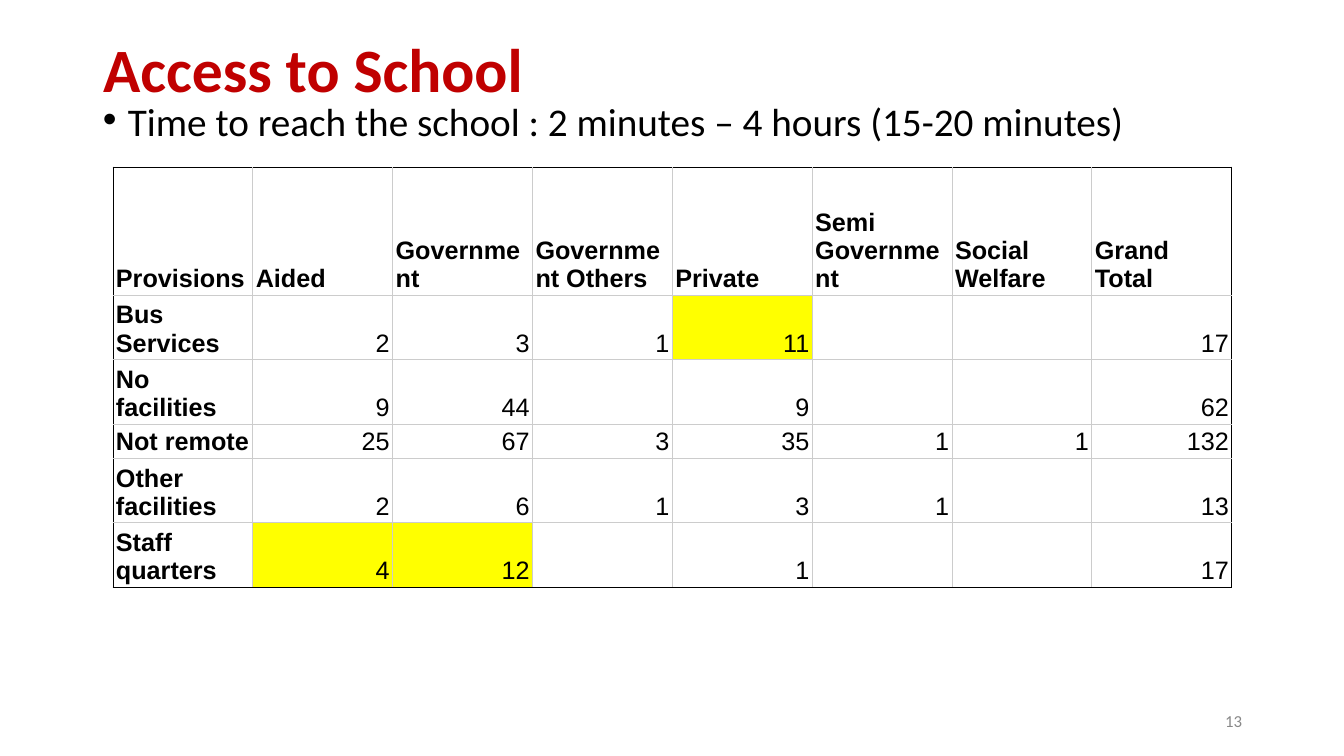
from lxml import etree
from pptx import Presentation
from pptx.dml.color import RGBColor
from pptx.enum.text import MSO_ANCHOR as ANCHOR, PP_ALIGN as ALIGN
from pptx.oxml.ns import qn
from pptx.util import Pt

PX = 914400 / 100.8
COLORS = {"title": "C00000", "text": "000000", "number": "888888",
          "grid": "CCCCCC", "frame": "000000", "highlight": "FFFF00"}

HEADINGS = ["Provisions", "Aided", "Government", "Government Others", "Private",
            "Semi Government", "Social Welfare", "Grand Total"]
PROVISIONS = [
    ["Bus Services", 2, 3, 1, 11, "", "", 17],
    ["No facilities", 9, 44, "", 9, "", "", 62],
    ["Not remote", 25, 67, 3, 35, 1, 1, 132],
    ["Other facilities", 2, 6, 1, 3, 1, "", 13],
    ["Staff quarters", 4, 12, "", 1, "", "", 17],
]
HIGHLIGHTS = {(1, 4), (5, 1), (5, 2)}


def px(n):
    return round(n * PX)


def rgb(name):
    return RGBColor.from_string(COLORS[name])


def write(tf, text, size=18, font="Calibri", color="text", bold=False,
          align=ALIGN.LEFT, anchor=ANCHOR.TOP, spacing=1.0):
    tf.word_wrap = True
    tf.vertical_anchor = anchor
    p = tf.paragraphs[0]
    p.alignment = align
    p.line_spacing = spacing
    r = p.add_run()
    r.text = text
    r.font.size, r.font.name, r.font.bold = Pt(size), font, bold
    r.font.color.rgb = rgb(color)
    return p


def add_title(slide, x, y, w, h):
    sp = slide.shapes.title
    sp.left, sp.top, sp.width, sp.height = map(px, (x, y, w, h))
    write(sp.text_frame, "Access to School", size=44, color="title", bold=True,
          anchor=ANCHOR.MIDDLE, spacing=0.9)


def add_bullet(slide, x, y, w, h):
    sp = slide.shapes.add_textbox(*map(px, (x, y, w, h)))
    p = write(sp.text_frame,
              "Time to reach the school : 2 minutes – 4 hours (15-20 minutes)",
              size=28, spacing=0.7)
    pPr = p._p.get_or_add_pPr()
    pPr.set("marL", str(px(25)))
    pPr.set("indent", str(px(-26)))
    etree.SubElement(pPr, qn("a:buFont"), typeface="Arial")
    etree.SubElement(pPr, qn("a:buChar"), char="•")


def add_page_number(slide, x, y, w, h):
    sp = slide.shapes.add_textbox(*map(px, (x, y, w, h)))
    write(sp.text_frame, "13", size=12, color="number",
          align=ALIGN.RIGHT, anchor=ANCHOR.MIDDLE)


def set_borders(cell, outer):
    """Draw the sides named in outer as frame, the others as grid."""
    tcPr = cell._tc.get_or_add_tcPr()
    for i, side in enumerate("LRTB"):
        ln = etree.Element(qn(f"a:ln{side}"), w=str(Pt(0.75)))
        fill = etree.SubElement(ln, qn("a:solidFill"))
        etree.SubElement(fill, qn("a:srgbClr"),
                         val=COLORS["frame" if side in outer else "grid"])
        tcPr.insert(i, ln)


def add_provisions_table(slide, x, y, w, head_h, row_h):
    rows = [HEADINGS] + PROVISIONS
    last_row, last_col = len(rows) - 1, len(HEADINGS) - 1
    h = head_h + row_h * last_row
    table = slide.shapes.add_table(len(rows), len(HEADINGS),
                                   *map(px, (x, y, w, h))).table
    table.first_row = table.horz_banding = False
    # Body rows have a minimum height and grow with their text
    for i, row in enumerate(table.rows):
        row.height = px(row_h if i else head_h)
    for i, values in enumerate(rows):
        for j, value in enumerate(values):
            cell = table.cell(i, j)
            cell.margin_left = cell.margin_right = px(3)
            cell.margin_top = cell.margin_bottom = px(2)
            cell.vertical_anchor = ANCHOR.BOTTOM
            label = i == 0 or j == 0
            if value != "":
                write(cell.text_frame, str(value), font="Arial", bold=label,
                      align=ALIGN.LEFT if label else ALIGN.RIGHT,
                      anchor=ANCHOR.BOTTOM)
            if (i, j) in HIGHLIGHTS:
                cell.fill.solid()
                cell.fill.fore_color.rgb = rgb("highlight")
            else:
                cell.fill.background()
            edges = {"L": j == 0, "R": j == last_col,
                     "T": i == 0, "B": i == last_row}
            set_borders(cell, [side for side, on in edges.items() if on])


def main():
    prs = Presentation()
    prs.slide_width, prs.slide_height = px(1344), px(756)
    slide = prs.slides.add_slide(prs.slide_layouts[5])
    add_title(slide, 93, 0, 1159, 146)
    add_bullet(slide, 93, 105, 1159, 609)
    add_page_number(slide, 950, 701, 302, 40)
    add_provisions_table(slide, 113, 167, 1119, head_h=128, row_h=22)
    prs.save("out.pptx")


if __name__ == "__main__":
    main()
